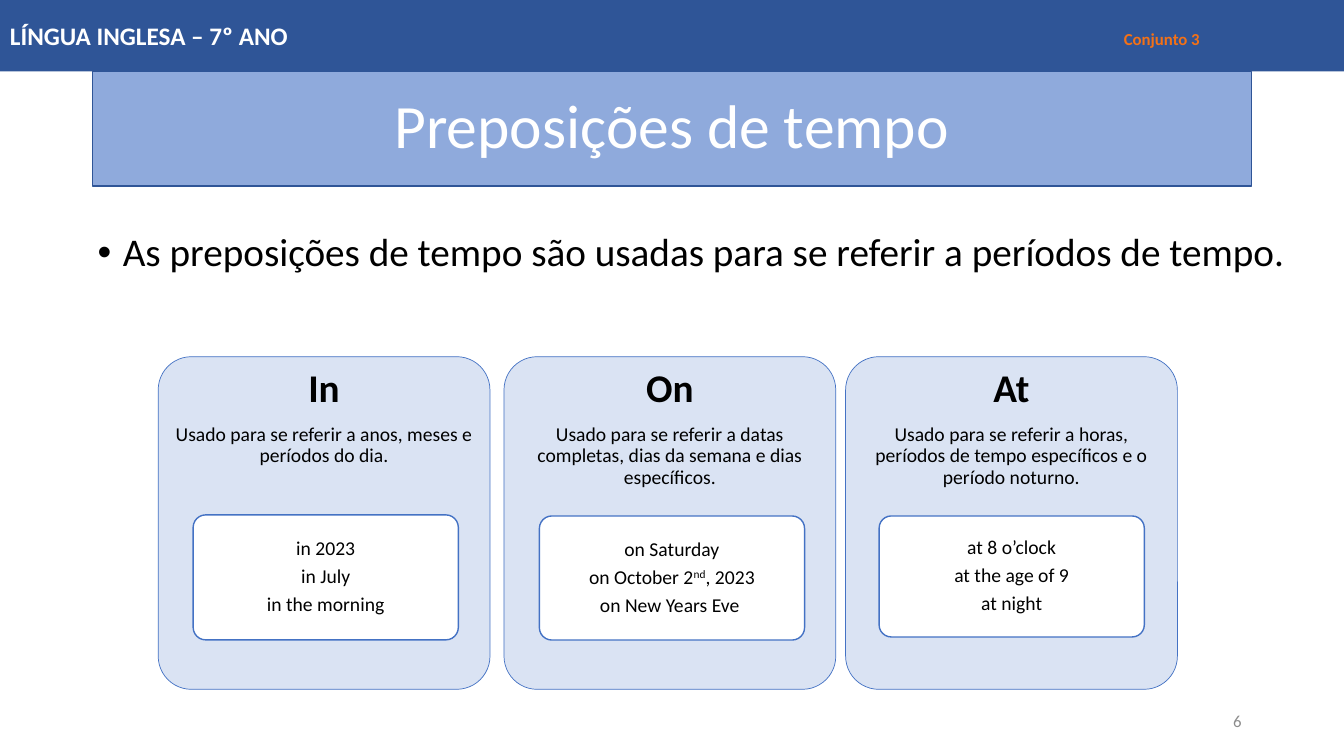
import pptx
import pptx.dml.color
import pptx.enum.shapes
import pptx.enum.text
import pptx.oxml
import pptx.oxml.ns
import pptx.util

Pt = pptx.util.Pt
SHAPES = pptx.enum.shapes.MSO_SHAPE
ALIGN = pptx.enum.text.PP_ALIGN
ANCHOR = pptx.enum.text.MSO_ANCHOR

COLOURS = {
    "navy": "2F5597", "sky": "8FAADC", "pale": "DAE3F3", "outline": "4472C4",
    "white": "FFFFFF", "black": "000000", "orange": "F47116", "grey": "8C8C8C",
}
SPACE_AFTER = 0.35  # share of the text size

CARDS = [
    # left, heading, use, examples as lists of runs, example box (dx, dy, height)
    (113, "In", "Usado para se referir a anos, meses e períodos do dia.",
     [["in 2023"], ["in July"], ["in the morning"]], (25, 113, 89.3)),
    (360, "On", "Usado para se referir a datas completas, dias da semana e "
     "dias específicos.",
     [["on Saturday"], ["on October 2", "nd", ", 2023"], ["on New Years Eve "]],
     (25.3, 113.8, 88.6)),
    (604, "At", "Usado para se referir a horas, períodos de tempo específicos "
     "e o período noturno.",
     [["at 8 o’clock"], ["at the age of 9"], ["at night"]], (24, 113.8, 86.4)),
]


def colour(name):
    return pptx.dml.color.RGBColor.from_string(COLOURS[name])


def add_xml(parent, tag, body="", **attributes):
    listed = "".join(f' {key}="{value}"' for key, value in attributes.items())
    namespace = pptx.oxml.ns.nsdecls("a")
    parent.append(pptx.oxml.parse_xml(f"<a:{tag} {namespace}{listed}>{body}</a:{tag}>"))


def format_span(span, size, ink, bold=False):
    span.font.name = "Calibri"
    span.font.size = Pt(size)
    span.font.bold = bold
    span.font.color.rgb = colour(ink)


def format_para(para, size, ink="black", bold=False, align=ALIGN.CENTER, spacing=0.9):
    para.alignment = align
    para.line_spacing = spacing
    for span in para.runs:
        format_span(span, size, ink, bold)


def set_frame(box, anchor, inset_x=7.2, inset_y=3.6):
    frame = box.text_frame
    frame.word_wrap = True
    frame.vertical_anchor = anchor
    frame.margin_left = frame.margin_right = Pt(inset_x)
    frame.margin_top = frame.margin_bottom = Pt(inset_y)
    return frame


def add_panel(page, kind, area, fill, line=None, width=1):
    panel = page.shapes.add_shape(kind, *map(Pt, area))
    panel.shadow.inherit = False
    panel.fill.solid()
    panel.fill.fore_color.rgb = colour(fill)
    if line:
        panel.line.color.rgb = colour(line)
        panel.line.width = Pt(width)
    else:
        panel.line.fill.background()
    if kind == SHAPES.ROUNDED_RECTANGLE:
        panel.adjustments[0] = 0.1
    return panel


def add_header(page, area):
    frame = set_frame(add_panel(page, SHAPES.RECTANGLE, area, "navy"), ANCHOR.MIDDLE)
    para = frame.paragraphs[0]
    para.text = "LÍNGUA INGLESA – 7º ANO\t"
    format_para(para, 18, "white", True, ALIGN.LEFT, 1.0)
    label = para.add_run()
    label.text = "Conjunto 3"
    format_span(label, 12, "orange", True)
    # Tab stop that places the set label
    stop = f'<a:tab pos="{Pt(795.6)}" algn="l"/>'
    add_xml(para._p.get_or_add_pPr(), "tabLst", stop)


def add_title(page, area):
    panel = add_panel(page, SHAPES.RECTANGLE, area, "sky", "navy")
    frame = set_frame(panel, ANCHOR.MIDDLE)
    frame.text = "Preposições de tempo"
    format_para(frame.paragraphs[0], 44, "white")


def add_statement(page, area):
    frame = set_frame(page.shapes.add_textbox(*map(Pt, area)), ANCHOR.TOP)
    frame.text = "As preposições de tempo são usadas para se referir a períodos de tempo."
    para = frame.paragraphs[0]
    format_para(para, 28, align=ALIGN.LEFT)
    para.space_before = Pt(10)
    settings = para._p.get_or_add_pPr()
    settings.set("marL", str(Pt(18)))
    settings.set("indent", str(Pt(-18)))
    add_xml(settings, "buFont", typeface="Arial")
    add_xml(settings, "buChar", char="•")


def add_examples(page, area, examples):
    panel = add_panel(page, SHAPES.ROUNDED_RECTANGLE, area, "white", "outline")
    frame = set_frame(panel, ANCHOR.MIDDLE, 2.9, 2.2)
    for index, pieces in enumerate(examples):
        para = frame.add_paragraph() if index else frame.paragraphs[0]
        for piece in pieces:
            span = para.add_run()
            span.text = piece
            if piece == "nd":
                span._r.get_or_add_rPr().set("baseline", "30000")
        format_para(para, 14)
        para.space_after = Pt(14 * SPACE_AFTER)


def add_card(page, area, heading, use, examples, example_box):
    left, top, width, height = area
    panel = add_panel(page, SHAPES.ROUNDED_RECTANGLE, area, "pale", "outline", 0.5)
    frame = set_frame(panel, ANCHOR.TOP, 1.7, 1.7)
    frame.text = f"{heading}\n{use}"
    for para, size in zip(frame.paragraphs, (28, 14)):
        format_para(para, size, bold=size == 28)
        para.space_after = Pt(size * SPACE_AFTER)
    shift, drop, depth = example_box
    add_examples(page, (left + shift, top + drop, 189.4, depth), examples)


def add_page_number(page, area):
    frame = set_frame(page.shapes.add_textbox(*map(Pt, area)), ANCHOR.MIDDLE)
    frame.text = "6"
    format_para(frame.paragraphs[0], 12, "grey", align=ALIGN.RIGHT, spacing=1.0)


def main():
    deck = pptx.Presentation()
    deck.slide_width, deck.slide_height = Pt(960), Pt(540)
    page = deck.slides.add_slide(deck.slide_layouts[6])

    # Title band, page number, header and statement
    add_title(page, (66, 51, 828, 82))
    add_page_number(page, (678, 500.5, 216, 28.8))
    add_header(page, (0, 0, 960, 51))
    add_statement(page, (62.7, 162.7, 867, 70.5))

    # One card for each preposition
    for left, *content in CARDS:
        add_card(page, (left, 254.8, 237, 237.6), *content)

    deck.save("out.pptx")


if __name__ == "__main__":
    main()
